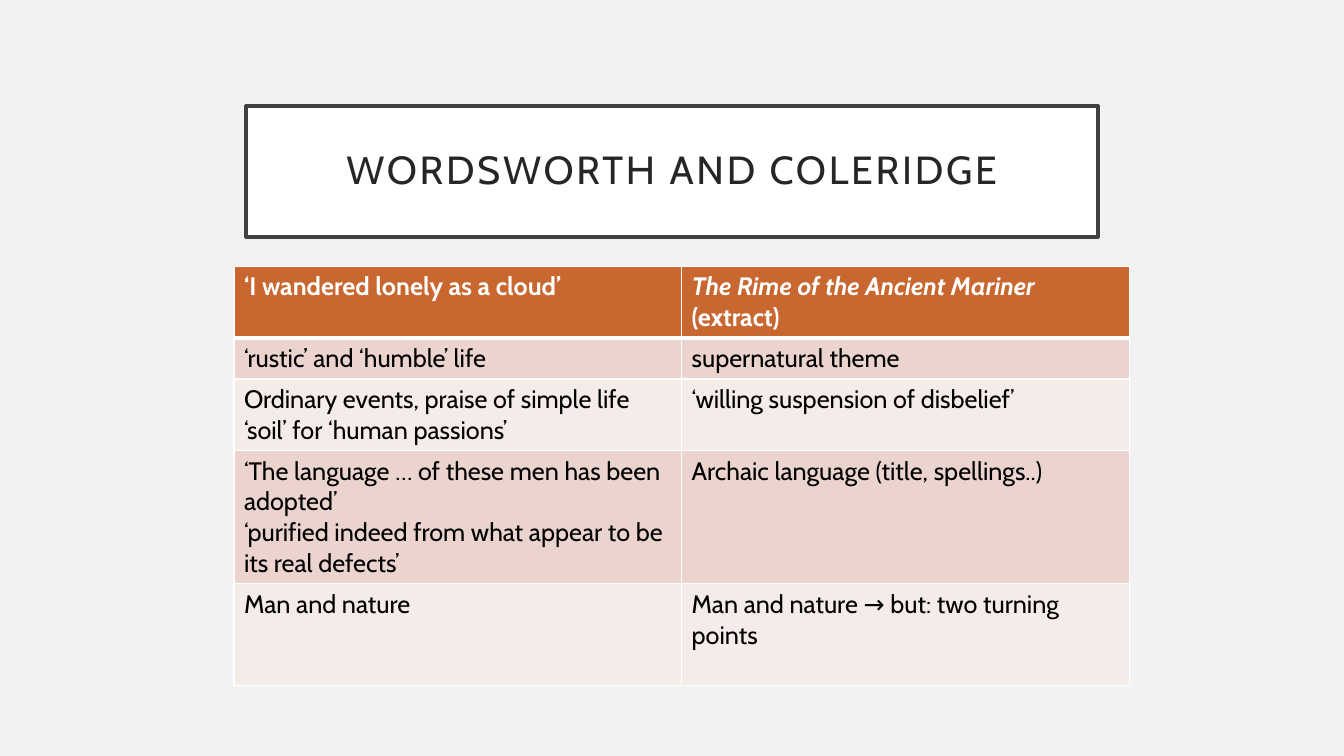
import pptx
import pptx.dml.color
import pptx.enum.text
import pptx.oxml
import pptx.oxml.ns
import pptx.util
from pptx.util import Inches

THEME = {
    "font": "Cabin",
    "background": "F2F2F2",
    "title": {"size": 28, "color": "262626", "fill": "FFFFFF", "line": "404040"},
    "header": {"size": 18, "color": "FFFFFF", "fill": "C96731"},
    "body": {"size": 18, "color": "000000", "bands": ["EBD3CE", "F5EBE8"]},
    "border": "FFFFFF",
}

# Each cell is a list of paragraphs
ROWS = [
    (["‘I wandered lonely as a cloud’"],
     ["The Rime of the Ancient Mariner (extract)"]),
    (["‘rustic’ and ‘humble’ life"], ["supernatural theme"]),
    (["Ordinary events, praise of simple life", "‘soil’ for ‘human passions’"],
     ["‘willing suspension of disbelief’"]),
    (["‘The language … of these men has been adopted’",
      "‘purified indeed from what appear to be its real defects’"],
     ["Archaic language (title, spellings..)"]),
    (["Man and nature"], ["Man and nature → but: two turning points"]),
]
ROW_HEIGHTS = [0.71, 0.41, 0.71, 1.32, 1.01]
ITALIC_TITLE = "The Rime of the Ancient Mariner "


def rgb(value):
    return pptx.dml.color.RGBColor.from_string(value)


def add_run(p, text, style, **extra):
    r = p.add_run()
    r.text = text
    font = {"name": THEME["font"], "size": pptx.util.Pt(style["size"]), **extra}
    for name, value in font.items():
        setattr(r.font, name, value)
    r.font.color.rgb = rgb(style["color"])
    return r


prs = pptx.Presentation()
prs.slide_width, prs.slide_height = Inches(13.33), Inches(7.5)
s = prs.slides.add_slide(prs.slide_layouts[5])
s.background.fill.solid()
s.background.fill.fore_color.rgb = rgb(THEME["background"])

# Framed title
title = s.shapes.title
title.left, title.top = Inches(2.44), Inches(1.05)
title.width, title.height = Inches(8.45), Inches(1.3)
title.fill.solid()
title.fill.fore_color.rgb = rgb(THEME["title"]["fill"])
title.line.color.rgb = rgb(THEME["title"]["line"])
title.line.width = pptx.util.Pt(2.5)
tf = title.text_frame
frame = {
    "word_wrap": True,
    "auto_size": pptx.enum.text.MSO_AUTO_SIZE.NONE,
    "vertical_anchor": pptx.enum.text.MSO_ANCHOR.MIDDLE,
    **{f"margin_{side}": Inches(0.2) for side in ("left", "top", "right", "bottom")},
}
for name, value in frame.items():
    setattr(tf, name, value)
p = tf.paragraphs[0]
p.alignment = pptx.enum.text.PP_ALIGN.CENTER
p.line_spacing = 0.9
r = add_run(p, "WORDSWORTH AND COLERIDGE", THEME["title"])
r._r.get_or_add_rPr().set("spc", "200")

# Comparison table
table = s.shapes.add_table(len(ROWS), 2, Inches(2.32), Inches(2.64),
                           Inches(8.88), Inches(sum(ROW_HEIGHTS))).table
for column in table.columns:
    column.width = Inches(4.44)

for i, (row, height) in enumerate(zip(ROWS, ROW_HEIGHTS)):
    table.rows[i].height = Inches(height)
    is_header = i == 0
    style = THEME["header"] if is_header else THEME["body"]
    fill = style["fill"] if is_header else style["bands"][(i - 1) % 2]
    # The rule under the header is shared by the first two rows
    widths = {"L": 1, "R": 1, "T": 3 if i == 1 else 1, "B": 3 if is_header else 1}
    for j, paragraphs in enumerate(row):
        cell = table.cell(i, j)
        tcPr = cell._tc.get_or_add_tcPr()
        for side, width in widths.items():
            tcPr.append(pptx.oxml.parse_xml(
                f'<a:ln{side} {pptx.oxml.ns.nsdecls("a")} w="{pptx.util.Pt(width)}">'
                f'<a:solidFill><a:srgbClr val="{THEME["border"]}"/></a:solidFill>'
                f'</a:ln{side}>'))
        cell.fill.solid()
        cell.fill.fore_color.rgb = rgb(fill)
        tf = cell.text_frame
        for k, text in enumerate(paragraphs):
            p = tf.add_paragraph() if k else tf.paragraphs[0]
            if text.startswith(ITALIC_TITLE):
                add_run(p, ITALIC_TITLE, style, bold=is_header, italic=True)
                text = text.removeprefix(ITALIC_TITLE)
            add_run(p, text, style, bold=is_header, italic=False)

prs.save("out.pptx")
